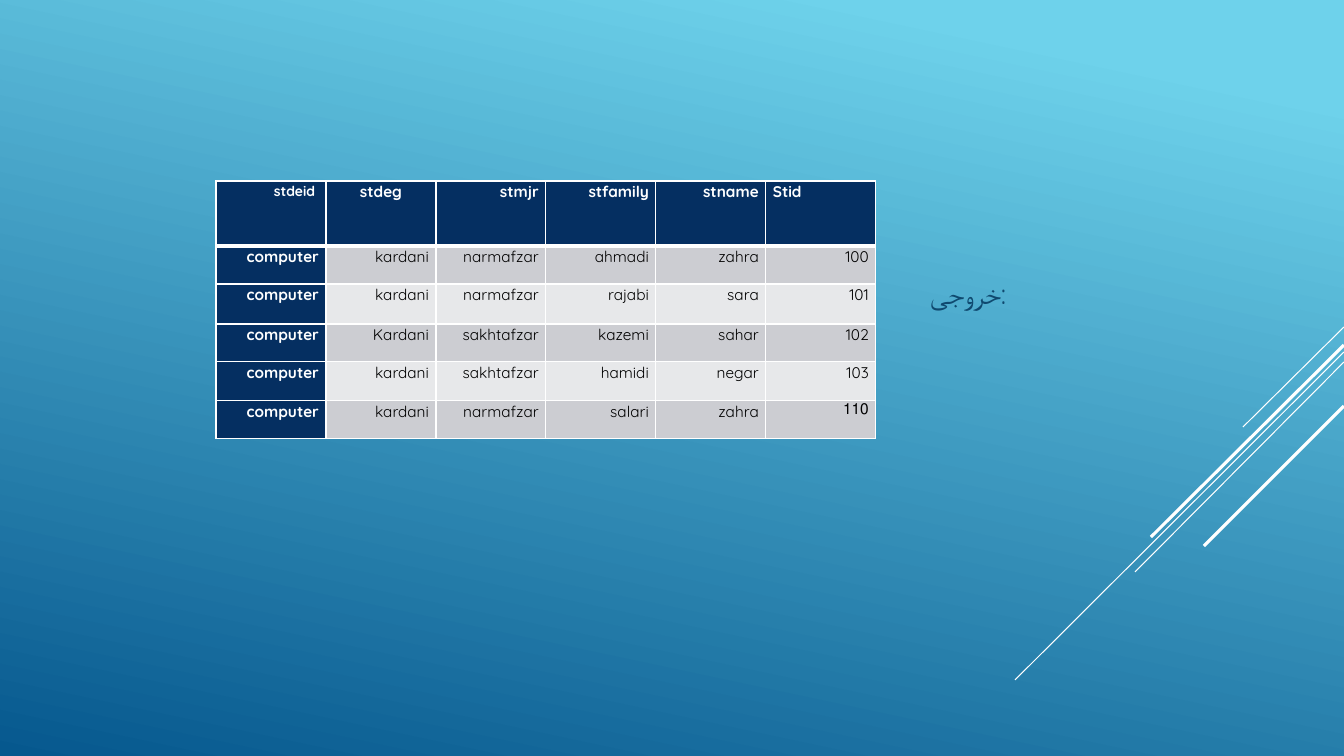
"""Build the slide with the student query output table."""
from dataclasses import dataclass
from typing import Any, NamedTuple

from lxml.etree import SubElement
from pptx import Presentation
from pptx.dml.color import RGBColor
from pptx.enum.shapes import MSO_CONNECTOR
from pptx.enum.text import MSO_ANCHOR, PP_ALIGN
from pptx.oxml.ns import qn
from pptx.util import Pt

SCALE = 12192000 / 1344


@dataclass(frozen=True)
class Theme:
    font: str = "Quicksand"
    sky: str = "6ED2EB"
    sea: str = "06588E"
    white: str = "FFFFFF"
    black: str = "000000"
    navy: str = "052F61"
    label: str = "0F496F"
    bands: tuple[str, str] = ("CCCDD2", "E7E8EA")
    label_size: float = 20
    cell_size: float = 11
    small_size: float = 10
    thin: float = 0.75
    thick: float = 2.25
    border: float = 1
    header_border: float = 3


class Ray(NamedTuple):
    top: int
    left: int
    bottom: int
    width: float


class CellStyle(NamedTuple):
    fill: str
    color: str
    bold: bool
    size: float = 11
    align: PP_ALIGN = PP_ALIGN.RIGHT
    right: int = 7
    bottom_border: float = 1
    rtl: bool = False


THEME = Theme()
RAYS = [
    Ray(327, 1243, 427, THEME.thin),
    Ray(352, 1015, 680, THEME.thin),
    Ray(362, 1135, 572, THEME.thin),
    Ray(345, 1151, 537, THEME.thick),
    Ray(406, 1204, 546, THEME.thick),
]
COL_WIDTH = 110
ROW_HEIGHTS = [65, 38, 40, 38, 39, 38]
ROWS = [
    ["stdeid", "stdeg", "stmjr", "stfamily", "stname", "Stid"],
    ["computer", "kardani", "narmafzar", "ahmadi", "zahra", "100"],
    ["computer", "kardani", "narmafzar", "rajabi", "sara", "101"],
    ["computer", "Kardani", "sakhtafzar", "kazemi", "sahar", "102"],
    ["computer", "kardani", "sakhtafzar", "hamidi", "negar", "103"],
    ["computer", "kardani", "narmafzar", "salari", "zahra", "110"],
]
HEADER = CellStyle(THEME.navy, THEME.white, True, THEME.cell_size,
                   bottom_border=THEME.header_border)
HEADER_CHANGES: dict[int, dict[str, Any]] = {
    0: {"size": THEME.small_size, "right": 11},
    1: {"align": PP_ALIGN.CENTER},
    5: {"align": PP_ALIGN.LEFT},
}


def px(n: int) -> int:
    """Turn pixels into EMU."""
    return round(n * SCALE)


def rgb(value: str) -> RGBColor:
    """Turn a hex string into a colour."""
    return RGBColor.from_string(value)


def set_all(target: Any, values: dict[str, Any]) -> None:
    """Set every named attribute on the target."""
    for name, value in values.items():
        setattr(target, name, value)


def write(p: Any, text: str, color: str, size: float, bold: bool = False) -> None:
    """Add one formatted run to a paragraph."""
    r = p.add_run()
    r.text = text
    set_all(r.font, {"name": THEME.font, "size": Pt(size), "bold": bold})
    r.font.color.rgb = rgb(color)


def paint_background(s: Any) -> None:
    """Fill the slide with the blue gradient."""
    fill = s.background.fill
    fill.gradient()
    fill.gradient_angle = 258
    stops = ((0.1, THEME.sky), (1.0, THEME.sea))
    for stop, (position, color) in zip(fill.gradient_stops, stops):
        stop.position = position
        stop.color.rgb = rgb(color)


def draw_ray(s: Any, ray: Ray) -> None:
    """Draw a diagonal line from the right edge of the slide."""
    c = s.shapes.add_connector(MSO_CONNECTOR.STRAIGHT, px(1344), px(ray.top),
                               px(ray.left), px(ray.bottom))
    c.line.color.rgb = rgb(THEME.white)
    c.line.width = Pt(ray.width)
    SubElement(c._element.spPr, qn("a:effectLst"))


def draw_label(s: Any) -> None:
    """Add the output label beside the table."""
    sp = s.shapes.add_textbox(px(76), px(76), px(940), px(434))
    tf = sp.text_frame
    set_all(tf, {"word_wrap": True, "vertical_anchor": MSO_ANCHOR.MIDDLE})
    p = tf.paragraphs[0]
    set_all(p, {"alignment": PP_ALIGN.RIGHT, "space_before": Pt(4),
                "space_after": Pt(6)})
    write(p, "خروجی:", THEME.label, THEME.label_size)


def add_borders(cell: Any, bottom: float) -> None:
    """Give a cell white borders with its own bottom width."""
    tc_pr = cell._tc.get_or_add_tcPr()
    for side in "LRTB":
        width = bottom if side == "B" else THEME.border
        ln = SubElement(tc_pr, qn(f"a:ln{side}"), w=str(Pt(width)))
        fill = SubElement(ln, qn("a:solidFill"))
        SubElement(fill, qn("a:srgbClr"), val=THEME.white)


def cell_style(row: int, col: int) -> CellStyle:
    """Choose the style for a table position."""
    if row == 0:
        return HEADER._replace(**HEADER_CHANGES.get(col, {}))
    if col == 0:
        return HEADER._replace(bottom_border=THEME.border)
    last = (row, col) == (len(ROWS) - 1, len(ROWS[0]) - 1)
    return CellStyle(THEME.bands[(row - 1) % 2], THEME.black, False,
                     THEME.cell_size, rtl=last)


def fill_cell(cell: Any, text: str, style: CellStyle) -> None:
    """Write and format one table cell."""
    add_borders(cell, style.bottom_border)
    cell.fill.solid()
    cell.fill.fore_color.rgb = rgb(style.fill)
    set_all(cell, {"margin_left": px(7), "margin_right": px(style.right),
                   "margin_top": 0, "margin_bottom": 0})
    p = cell.text_frame.paragraphs[0]
    set_all(p, {"alignment": style.align, "line_spacing": 1.07})
    if style.rtl:
        p._p.get_or_add_pPr().set("rtl", "1")
    write(p, text, style.color, style.size, style.bold)


def draw_table(s: Any) -> None:
    """Add the student table."""
    count = len(ROWS[0])
    table = s.shapes.add_table(len(ROWS), count, px(216), px(181),
                               px(COL_WIDTH * count), px(sum(ROW_HEIGHTS))).table
    table.horz_banding = False
    for column in table.columns:
        column.width = px(COL_WIDTH)
    for row, height in enumerate(ROW_HEIGHTS):
        table.rows[row].height = px(height)
        for col, text in enumerate(ROWS[row]):
            fill_cell(table.cell(row, col), text, cell_style(row, col))


def main() -> None:
    """Build and save the presentation."""
    prs = Presentation()
    set_all(prs, {"slide_width": px(1344), "slide_height": px(756)})
    s = prs.slides.add_slide(prs.slide_layouts[6])
    paint_background(s)
    for ray in RAYS:
        draw_ray(s, ray)
    draw_label(s)
    draw_table(s)
    prs.save("out.pptx")


if __name__ == "__main__":
    main()
